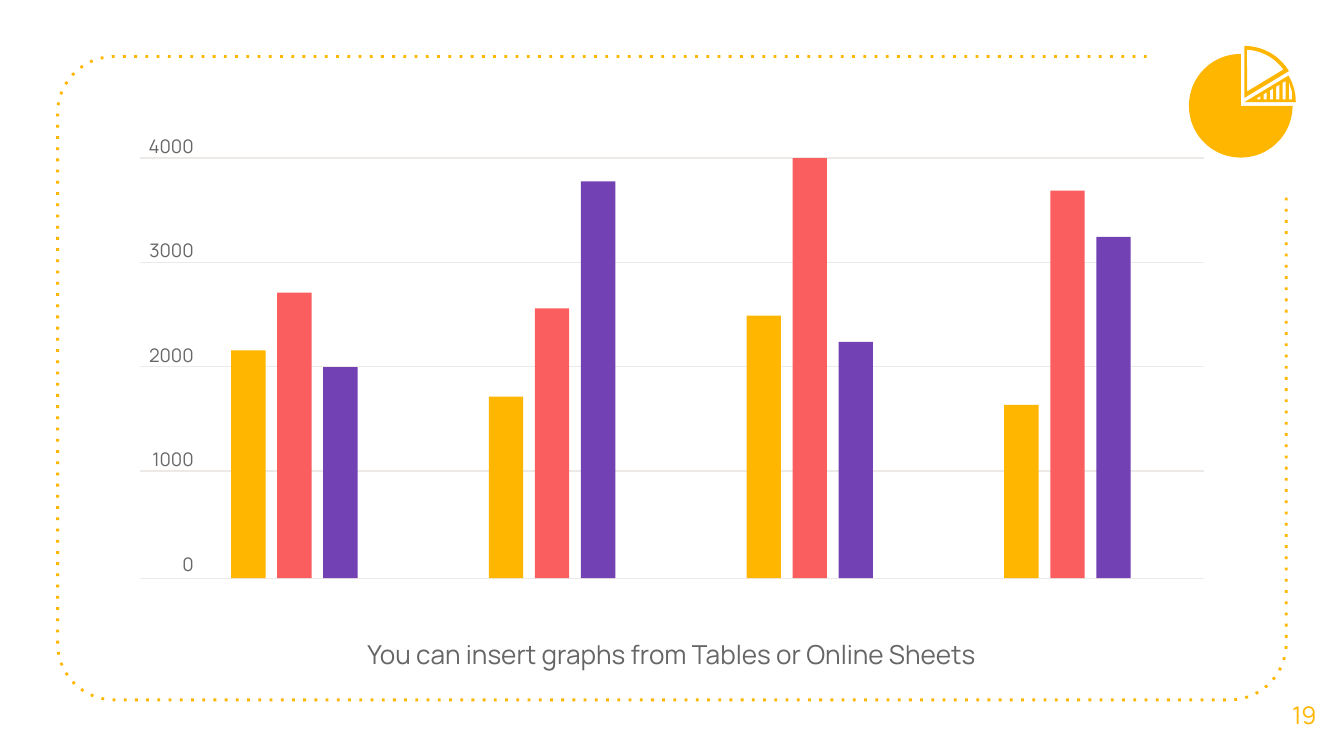
from math import cos, radians, sin, sqrt

from lxml.etree import SubElement
from pptx import Presentation
from pptx.dml.color import RGBColor
from pptx.enum.dml import MSO_LINE
from pptx.enum.shapes import MSO_CONNECTOR, MSO_SHAPE
from pptx.enum.text import MSO_ANCHOR, MSO_AUTO_SIZE, PP_ALIGN
from pptx.oxml.ns import qn
from pptx.util import Cm, Pt

YELLOW, RED, PURPLE = "FFB600", "FA5E5E", "7241B4"
GREY, GRID = "666666", "ECE9E6"
color = RGBColor.from_string


def arc(x, y, radius, start, end, steps=24):
    """Points in cm along a circle; angles in degrees, clockwise from the right."""
    angles = [radians(start + (end - start) * i / steps) for i in range(steps + 1)]
    return [(x + radius * cos(a), y + radius * sin(a)) for a in angles]


def add_outline(contours, close=True):
    """Draw one yellow freeform from contours given in cm."""
    contours = [[(Cm(x), Cm(y)) for x, y in contour] for contour in contours]
    builder = slide.shapes.build_freeform(*contours[0][0])
    for contour in contours:
        if contour is not contours[0]:
            builder.move_to(*contour[0])
        builder.add_line_segments(contour[1:], close=close)
    outline = builder.convert_to_shape()
    outline.shadow.inherit = False
    if close:
        outline.fill.solid()
        outline.fill.fore_color.rgb = color(YELLOW)
        outline.line.fill.background()
    else:
        outline.fill.background()
        outline.line.color.rgb = color(YELLOW)
    return outline


prs = Presentation()
prs.slide_width, prs.slide_height = Cm(25.4), Cm(14.29)
slide = prs.slides.add_slide(prs.slide_layouts[1])
title, caption = slide.placeholders
title.element.getparent().remove(title.element)

# Dotted frame, open at the top right for the icon
left, top, right, bottom, radius = 1.09, 1.07, 24.31, 13.23, 1.07
frame = add_outline([[
    (21.67, top),
    *arc(left + radius, top + radius, radius, 270, 180),
    *arc(left + radius, bottom - radius, radius, 180, 90),
    *arc(right - radius, bottom - radius, radius, 90, 0),
    (right, 3.71),
]], close=False)
frame.line.width = Pt(1.5)
frame.line.dash_style = MSO_LINE.ROUND_DOT
frame.line._ln.find(qn("a:prstDash")).set("val", "dot")

# Grid lines
grid_top, baseline = 2.99, 10.93
for y in [grid_top + 1.97 * i for i in range(4)] + [baseline]:
    grid_line = slide.shapes.add_connector(
        MSO_CONNECTOR.STRAIGHT, Cm(2.64), Cm(y), Cm(22.76), Cm(y))
    grid_line.line.color.rgb = color(GRID)
    grid_line.line.width = Pt(0.75)
    SubElement(grid_line.element.spPr, qn("a:effectLst"))

# Texts
caption.left, caption.top, caption.width, caption.height = Cm(1.27), Cm(11.81), Cm(22.86), Cm(1.45)
scale_labels = slide.shapes.add_textbox(Cm(2.64), Cm(2.54), Cm(1.02), Cm(8.41))
page_number = slide.shapes.add_textbox(Cm(23.9), Cm(12.75), Cm(1.5), Cm(1.52))

texts = [
    (caption, ["You can insert graphs from Tables or Online Sheets"], 0.25, MSO_ANCHOR.TOP,
     {"alignment": PP_ALIGN.CENTER, "space_before": Pt(3.6)}, {"size": Pt(14)}, GREY),
    (scale_labels, ["4000", "3000", "2000", "1000", "0"], 0, MSO_ANCHOR.TOP,
     {"alignment": PP_ALIGN.RIGHT, "space_before": Pt(44)}, {"size": Pt(10)}, GREY),
    (page_number, ["19"], 0.25, MSO_ANCHOR.MIDDLE,
     {"alignment": PP_ALIGN.CENTER}, {"size": Pt(13)}, YELLOW),
]
for box, lines, margin, anchor, paragraph_format, font_format, text_color in texts:
    text_frame = box.text_frame
    text_frame.text = "\n".join(lines)
    frame_format = {"word_wrap": True, "auto_size": MSO_AUTO_SIZE.NONE, "vertical_anchor": anchor}
    for side in ("left", "top", "right", "bottom"):
        frame_format[f"margin_{side}"] = Cm(margin)
    for name, value in frame_format.items():
        setattr(text_frame, name, value)
    for paragraph in text_frame.paragraphs:
        for name, value in paragraph_format.items():
            setattr(paragraph, name, value)
        for name, value in {"name": "Manrope", **font_format}.items():
            setattr(paragraph.runs[0].font, name, value)
        paragraph.runs[0].font.color.rgb = color(text_color)
scale_labels.text_frame.paragraphs[0].space_before = Pt(0)

caption_properties = caption.text_frame.paragraphs[0]._p.get_or_add_pPr()
caption_properties.set("marL", "0")
caption_properties.set("indent", "0")
SubElement(caption_properties, qn("a:buNone"))

# Bars
groups = [(2170, 2720, 2010), (1730, 2570, 3780), (2500, 4000, 2250), (1650, 3690, 3250)]
for group, values in enumerate(groups):
    for series, (value, bar_color) in enumerate(zip(values, (YELLOW, RED, PURPLE))):
        height = (baseline - grid_top) * value / 4000
        bar = slide.shapes.add_shape(
            MSO_SHAPE.RECTANGLE, Cm(4.37 + 4.87 * group + 0.87 * series),
            Cm(baseline - height), Cm(0.65), Cm(height))
        bar.shadow.inherit = False
        bar.fill.solid()
        bar.fill.fore_color.rgb = color(bar_color)
        bar.line.fill.background()

# Pie icon: three quarters, a striped slice and an outlined slice
add_outline([[(23.45, 2), *arc(23.45, 2, 0.98, 0, 270, 60)]])

tip_x, tip_y = 23.52, 1.93
stripes = []
for i in range(6):
    end = 0.3 + 0.12 * i
    start = end - 0.06
    rise_start, rise_end = [min(0.6 * x - 0.07, sqrt(0.92 ** 2 - x ** 2)) for x in (start, end)]
    stripes.append([(tip_x + start, tip_y - 0.05), (tip_x + start, tip_y - rise_start),
                    (tip_x + end, tip_y - rise_end), (tip_x + end, tip_y - 0.05)])
add_outline([[(tip_x, tip_y), *arc(tip_x, tip_y, 0.97, -31, 0)], *stripes])

tip_y = 1.85
add_outline([
    [(tip_x, tip_y), *arc(tip_x, tip_y, 0.98, -90, -31)],
    [(tip_x + 0.05, tip_y - 0.12), *arc(tip_x, tip_y, 0.91, -87, -36)],
])

prs.save("out.pptx")
